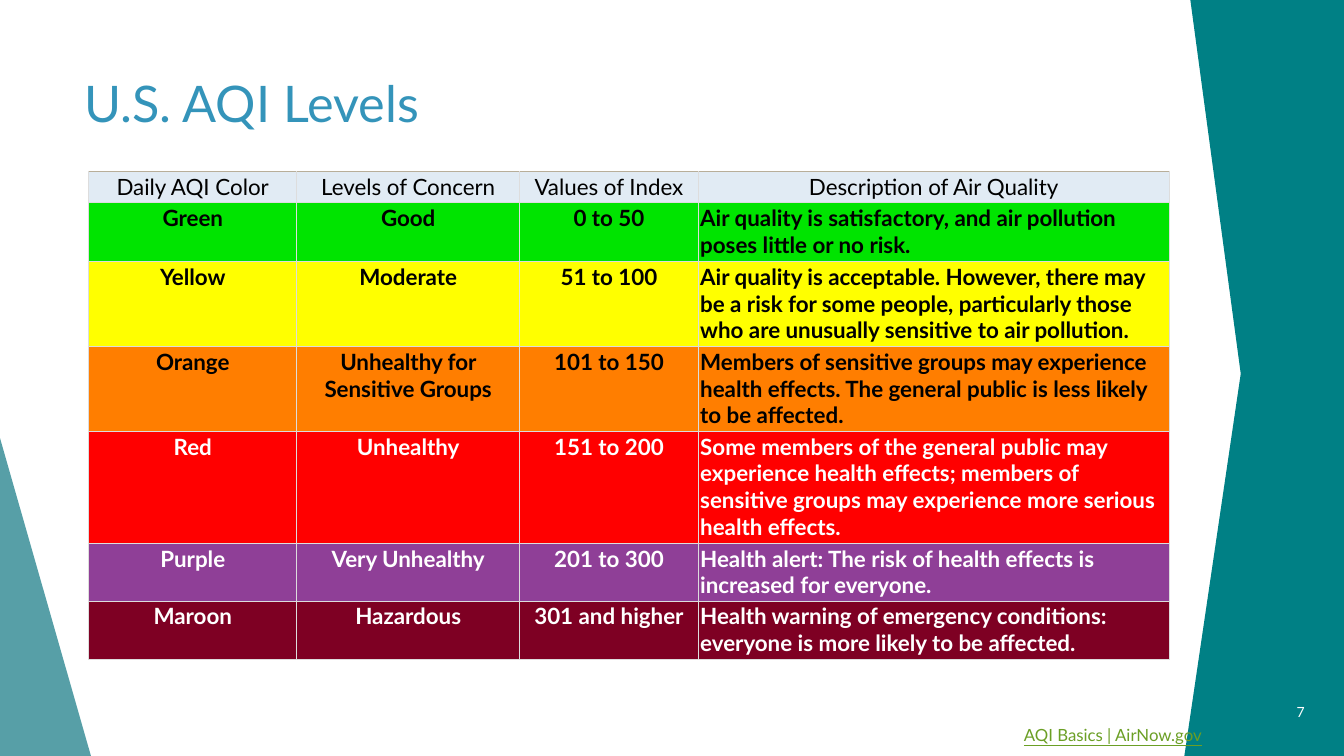
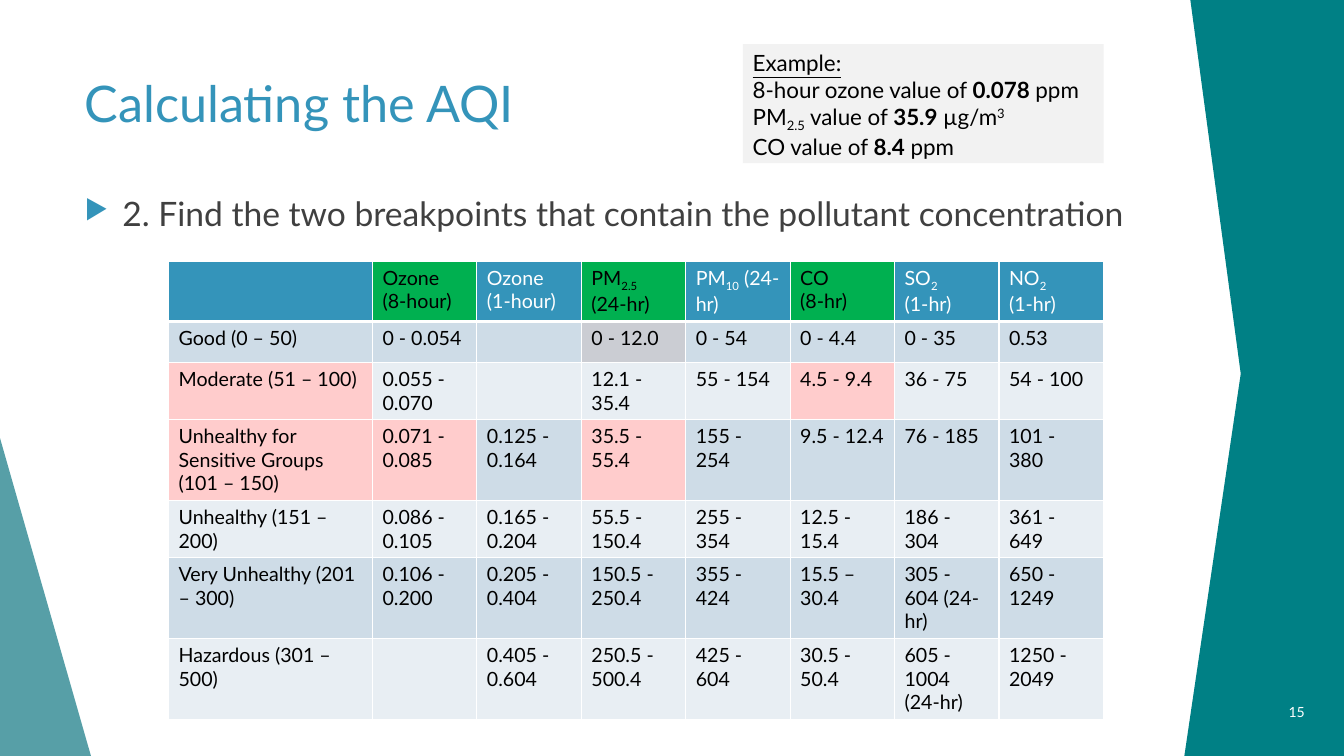
import pptx
import pptx.dml.color
import pptx.enum.shapes
import pptx.enum.text
import pptx.oxml
import pptx.oxml.ns
import pptx.util
from lxml import etree

Pt = pptx.util.Pt
RGB = pptx.dml.color.RGBColor
SHAPE = pptx.enum.shapes.MSO_SHAPE
ALIGN = pptx.enum.text.PP_ALIGN
ANCHOR = pptx.enum.text.MSO_ANCHOR
qn = pptx.oxml.ns.qn

FONT = "Lato"
WHITE = RGB(0xFF, 0xFF, 0xFF)
BLACK = RGB(0, 0, 0)
BLUE = RGB(0x34, 0x94, 0xBA)
TEAL = RGB(0x00, 0x80, 0x85)
SOFT_TEAL = RGB(0x3A, 0x8F, 0x98)
DARK_GREY = RGB(0x40, 0x40, 0x40)
PALE_GREY = RGB(0xF2, 0xF2, 0xF2)
LINK_GREEN = RGB(0x6B, 0x9F, 0x25)
RULE_GREY = RGB(0xDD, 0xDD, 0xDD)
RULE_TAN = RGB(0xB8, 0xAE, 0x99)
HEADER_BLUE = RGB(0xE1, 0xEB, 0xF4)
BAND_DARK = RGB(0xCE, 0xDC, 0xE7)
BAND_LIGHT = RGB(0xE8, 0xEE, 0xF3)
CELL_GREY = RGB(0xCB, 0xCD, 0xD3)
PINK = RGB(0xFF, 0xCC, 0xCC)
HEADER_GREEN = RGB(0x00, 0xB0, 0x50)
AQI_GREEN = RGB(0x00, 0xE4, 0x00)
AQI_YELLOW = RGB(0xFF, 0xFF, 0x00)
AQI_ORANGE = RGB(0xFF, 0x7E, 0x00)
AQI_RED = RGB(0xFF, 0x00, 0x00)
AQI_PURPLE = RGB(0x8F, 0x3F, 0x97)
AQI_MAROON = RGB(0x7E, 0x00, 0x23)

SUB = {"baseline": -25000}
SUPER = {"baseline": 30000}
BOLD = {"bold": True}


def write(tf, paragraphs, size, color, align=ALIGN.LEFT, **formats):
    """Fill a frame; a paragraph is a string or a list of strings and (text, formats) pairs."""
    tf.word_wrap = True
    for i, pieces in enumerate(paragraphs):
        p = tf.add_paragraph() if i else tf.paragraphs[0]
        p.alignment = align
        for piece in [pieces] if isinstance(pieces, str) else pieces:
            text, extra = (piece, {}) if isinstance(piece, str) else piece
            if not text:
                continue
            r = p.add_run()
            r.text = text
            r.font.color.rgb = color
            for name, value in {"name": FONT, "size": Pt(size), **formats, **extra}.items():
                if name == "baseline":
                    r._r.get_or_add_rPr().set(name, str(value))
                else:
                    setattr(r.font, name, value)


def table_cells(s, left, top, widths, heights, border, header_border):
    """Add a table with cell borders and yield (row, column, cell)."""
    table = s.shapes.add_table(len(heights), len(widths), Pt(left), Pt(top),
                               Pt(sum(widths)), Pt(sum(heights))).table
    table.first_row = table.horz_banding = False
    for column, width in zip(table.columns, widths):
        column.width = Pt(width)
    for row, height in zip(table.rows, heights):
        row.height = Pt(height)
    for i in range(len(heights)):
        for j in range(len(widths)):
            cell = table.cell(i, j)
            tcPr = cell._tc.get_or_add_tcPr()
            for edge in "LRTB":
                color, width = header_border.get(edge, border) if i == 0 else border
                ln = etree.SubElement(tcPr, qn(f"a:ln{edge}"), w=str(Pt(width)))
                fill = etree.SubElement(ln, qn("a:solidFill"))
                etree.SubElement(fill, qn("a:srgbClr"), val=str(color))
            yield i, j, cell


prs = pptx.Presentation()
prs.slide_width, prs.slide_height = Pt(960), Pt(540)

# Bands, title and page number on both slides
slides = []
for title, number in [("U.S. AQI Levels", "7"), ("Calculating the AQI", "15")]:
    s = prs.slides.add_slide(prs.slide_layouts[6])
    slides.append(s)
    wedge = s.shapes.add_shape(SHAPE.RIGHT_TRIANGLE, Pt(-1.4), Pt(308), Pt(66.4), Pt(232))
    builder = s.shapes.build_freeform(Pt(960), 0)
    builder.add_line_segments([(Pt(x), Pt(y)) for x, y in
                               [(960, 540), (846, 540), (886.3, 267), (850.3, 0)]])
    band = builder.convert_to_shape()
    for sp, color in [(wedge, SOFT_TEAL), (band, TEAL)]:
        sp.shadow.inherit = False
        sp.fill.solid()
        sp.fill.fore_color.rgb = color
        sp.line.fill.background()
    tint = wedge._element.spPr.find(qn("a:solidFill"))[0]
    etree.SubElement(tint, qn("a:alpha"), val="85000")

    sp = s.shapes.add_textbox(Pt(53.3), Pt(48.2), Pt(858), Pt(104))
    write(sp.text_frame, [title], 36, BLUE)
    sp = s.shapes.add_textbox(Pt(885), Pt(494), Pt(54), Pt(29))
    sp.text_frame.vertical_anchor = ANCHOR.MIDDLE
    write(sp.text_frame, [number], 10, WHITE, ALIGN.RIGHT)

levels_slide, breakpoints_slide = slides

# AQI levels
levels = [
    (HEADER_BLUE, BLACK, "Daily AQI Color", "Levels of Concern", "Values of Index",
     "Description of Air Quality"),
    (AQI_GREEN, BLACK, "Green", "Good", "0 to 50",
     "Air quality is satisfactory, and air pollution poses little or no risk."),
    (AQI_YELLOW, BLACK, "Yellow", "Moderate", "51 to 100",
     "Air quality is acceptable. However, there may be a risk for some people, "
     "particularly those who are unusually sensitive to air pollution."),
    (AQI_ORANGE, BLACK, "Orange", "Unhealthy for Sensitive Groups", "101 to 150",
     "Members of sensitive groups may experience health effects. "
     "The general public is less likely to be affected."),
    (AQI_RED, WHITE, "Red", "Unhealthy", "151 to 200",
     "Some members of the general public may experience health effects; "
     "members of sensitive groups may experience more serious health effects."),
    (AQI_PURPLE, WHITE, "Purple", "Very Unhealthy", "201 to 300",
     "Health alert: The risk of health effects is increased for everyone."),
    (AQI_MAROON, WHITE, "Maroon", "Hazardous", "301 and higher",
     "Health warning of emergency conditions: everyone is more likely to be affected."),
]
for i, j, cell in table_cells(levels_slide, 63.4, 122.2, [148.6, 159.2, 127.6, 336.4],
                              [22.6, 42, 60.6, 60.6, 80, 41.4, 41.4],
                              (RULE_GREY, 0.5), {"T": (RULE_TAN, 0.5)}):
    fill, color, *texts = levels[i]
    for side in ("left", "top", "right", "bottom"):
        setattr(cell, f"margin_{side}", Pt(1.4))
    cell.vertical_anchor = ANCHOR.TOP if i else ANCHOR.MIDDLE
    cell.fill.solid()
    cell.fill.fore_color.rgb = fill
    align = ALIGN.LEFT if i and j == 3 else ALIGN.CENTER
    write(cell.text_frame, [texts[j]], 16, color, align, bold=i > 0)

sp = levels_slide.shapes.add_textbox(Pt(724.3), Pt(514), Pt(338), Pt(22))
write(sp.text_frame, ["AQI Basics | AirNow.gov"], 12, LINK_GREEN, underline=True)

# Breakpoints
sp = breakpoints_slide.shapes.add_textbox(Pt(53.3), Pt(134), Pt(802), Pt(80))
pPr = sp.text_frame.paragraphs[0]._p.get_or_add_pPr()
pPr.set("marL", str(Pt(27)))
pPr.set("indent", str(Pt(-27)))
bullet_color = etree.SubElement(pPr, qn("a:buClr"))
etree.SubElement(bullet_color, qn("a:srgbClr"), val=str(BLUE))
etree.SubElement(pPr, qn("a:buSzPct"), val="80000")
etree.SubElement(pPr, qn("a:buChar"), char="▶")
write(sp.text_frame, ["2. Find the two breakpoints that contain the pollutant concentration"],
      24, DARK_GREY)

breakpoints = [
    [[""], ["Ozone (8-hour)"], ["Ozone (1-hour)"], [["PM", ("2.5", SUB), " (24-hr)"]],
     [["PM", ("10", SUB), " (24-hr)"]], ["CO", "(8-hr)"],
     [["SO", ("2", SUB)], "(1-hr)"], [["NO", ("2", SUB)], "(1-hr)"]],
    ["Good (0 – 50)", "0 - 0.054", "", "0 - 12.0", "0 - 54", "0 - 4.4", "0 - 35", "0.53"],
    ["Moderate (51 – 100)", "0.055 - 0.070", "", "12.1 - 35.4", "55 - 154", "4.5 - 9.4",
     "36 - 75", "54 - 100"],
    ["Unhealthy for Sensitive Groups (101 – 150)", "0.071 - 0.085", "0.125 - 0.164",
     "35.5 - 55.4", "155 - 254", "9.5 - 12.4", "76 - 185", "101 - 380"],
    ["Unhealthy (151 – 200)", "0.086 - 0.105", "0.165 - 0.204", "55.5 - 150.4",
     "255 - 354", "12.5 - 15.4", "186 - 304", "361 - 649"],
    ["Very Unhealthy (201 – 300)", "0.106 - 0.200", "0.205 - 0.404", "150.5 - 250.4",
     "355 - 424", "15.5 – 30.4", "305 - 604 (24-hr)", "650 - 1249"],
    ["Hazardous (301 – 500)", "", "0.405 - 0.604", "250.5 - 500.4", "425 - 604",
     "30.5 - 50.4", "605 - 1004 (24-hr)", "1250 - 2049"],
]
highlights = {(0, j): HEADER_GREEN for j in (1, 3, 5)}
highlights.update({rc: PINK for rc in [(2, 0), (2, 5), (3, 0), (3, 1), (3, 3)]})
highlights[1, 3] = CELL_GREY
for i, j, cell in table_cells(breakpoints_slide, 120.4, 186.4, [145.7] + [74.6] * 7,
                              [42.8, 29.2, 40.8, 57.8, 40.8, 57.8, 57.6],
                              (WHITE, 1), {"B": (WHITE, 3)}):
    band = BLUE if i == 0 else BAND_DARK if i % 2 else BAND_LIGHT
    fill = highlights.get((i, j), band)
    cell.fill.solid()
    cell.fill.fore_color.rgb = fill
    content = breakpoints[i][j]
    write(cell.text_frame, [content] if i else content, 14, WHITE if fill == BLUE else BLACK)

sp = breakpoints_slide.shapes.add_shape(SHAPE.RECTANGLE, Pt(530.6), Pt(31.6), Pt(257.8), Pt(85))
sp.shadow.inherit = False
sp.fill.solid()
sp.fill.fore_color.rgb = PALE_GREY
sp.line.fill.background()
sp.text_frame.vertical_anchor = ANCHOR.TOP
write(sp.text_frame, [
    [("Example:", {"underline": True})],
    ["8-hour ozone value of ", ("0.078", BOLD), " ppm"],
    ["PM", ("2.5", SUB), " value of ", ("35.9", BOLD), " µg/m", ("3", SUPER)],
    ["CO value of ", ("8.4", BOLD), " ppm"],
], 16, BLACK)

prs.save("out.pptx")
